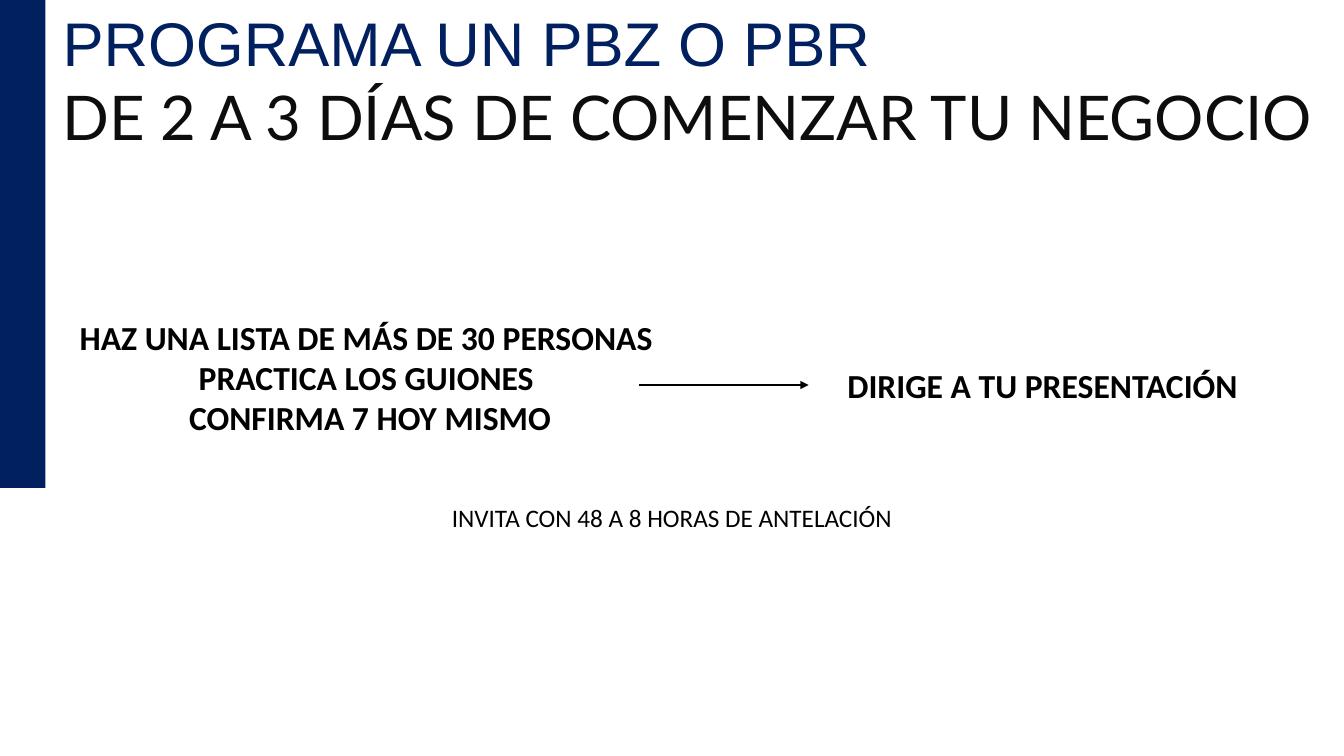
from lxml.etree import SubElement
from pptx import Presentation
from pptx.dml.color import RGBColor
from pptx.enum.shapes import MSO_CONNECTOR, MSO_SHAPE
from pptx.enum.text import MSO_ANCHOR, MSO_AUTO_SIZE, PP_ALIGN
from pptx.oxml.ns import qn
from pptx.util import Inches, Pt

NAVY = RGBColor(0x00, 0x20, 0x60)
INK = RGBColor(0x0D, 0x0D, 0x0D)
BLACK = RGBColor(0x00, 0x00, 0x00)


class Deck:
    """Holds the text style and the current slide."""

    font = "Calibri"

    def __init__(self, show):
        self.slide = show.slides.add_slide(show.slide_layouts[5])

    def place(self, shape, box):
        shape.left, shape.top, shape.width, shape.height = map(Inches, box)

    def fill(self, frame, lines, align):
        """Each line is (text, font, size, colour, bold)."""
        frame.word_wrap = True
        frame.auto_size = MSO_AUTO_SIZE.NONE
        frame.vertical_anchor = MSO_ANCHOR.TOP
        frame.text = "\n".join(line[0] for line in lines)
        for para, (_, name, size, color, bold) in zip(frame.paragraphs, lines):
            para.alignment = align
            font = para.runs[0].font
            font.name, font.size, font.bold = name, Pt(size), bold
            font.color.rgb = color

    def title(self, box, lines):
        shape = self.slide.shapes.title
        self.place(shape, box)
        self.fill(shape.text_frame, lines, PP_ALIGN.LEFT)

    def text(self, box, lines, size, bold=False):
        shape = self.slide.shapes.add_textbox(*map(Inches, box))
        rows = [(line, self.font, size, BLACK, bold) for line in lines]
        self.fill(shape.text_frame, rows, PP_ALIGN.CENTER)

    def bar(self, box, color):
        shape = self.slide.shapes.add_shape(
            MSO_SHAPE.RECTANGLE, *map(Inches, box))
        shape.shadow.inherit = False
        shape.fill.solid()
        shape.fill.fore_color.rgb = color
        shape.line.fill.background()

    def arrow(self, start, end, y):
        link = self.slide.shapes.add_connector(
            MSO_CONNECTOR.STRAIGHT, *map(Inches, (start, y, end, y)))
        link.line.color.rgb = BLACK
        link.line.width = Pt(1.5)
        SubElement(link.line._get_or_add_ln(), qn("a:tailEnd"), type="triangle")
        SubElement(link._element.spPr, qn("a:effectLst"))


def main():
    show = Presentation()
    show.slide_width, show.slide_height = Inches(13.33), Inches(7.5)
    deck = Deck(show)

    # Heading and side bar
    deck.title((0.52, 0, 12.81, 1.58), [
        ("PROGRAMA UN PBZ O PBR", "Arial", 44, NAVY, False),
        ("DE 2 A 3 DÍAS DE COMENZAR TU NEGOCIO", "Lato", 44, INK, False),
    ])
    deck.bar((0, 0, 0.45, 4.84), NAVY)

    # Steps that lead to the presentation
    deck.text((0.68, 3.09, 5.98, 1.31), [
        "HAZ UNA LISTA DE MÁS DE 30 PERSONAS ",
        "PRACTICA LOS GUIONES ",
        "CONFIRMA 7 HOY MISMO",
    ], 24, bold=True)
    deck.arrow(6.34, 8.02, 3.82)
    deck.text((7.35, 3.57, 5.98, 0.5), ["DIRIGE A TU PRESENTACIÓN"], 24, bold=True)

    # Timing note
    deck.text((3.53, 4.93, 6.27, 0.4),
              ["INVITA CON 48 A 8 HORAS DE ANTELACIÓN"], 18)

    show.save("out.pptx")


if __name__ == "__main__":
    main()
